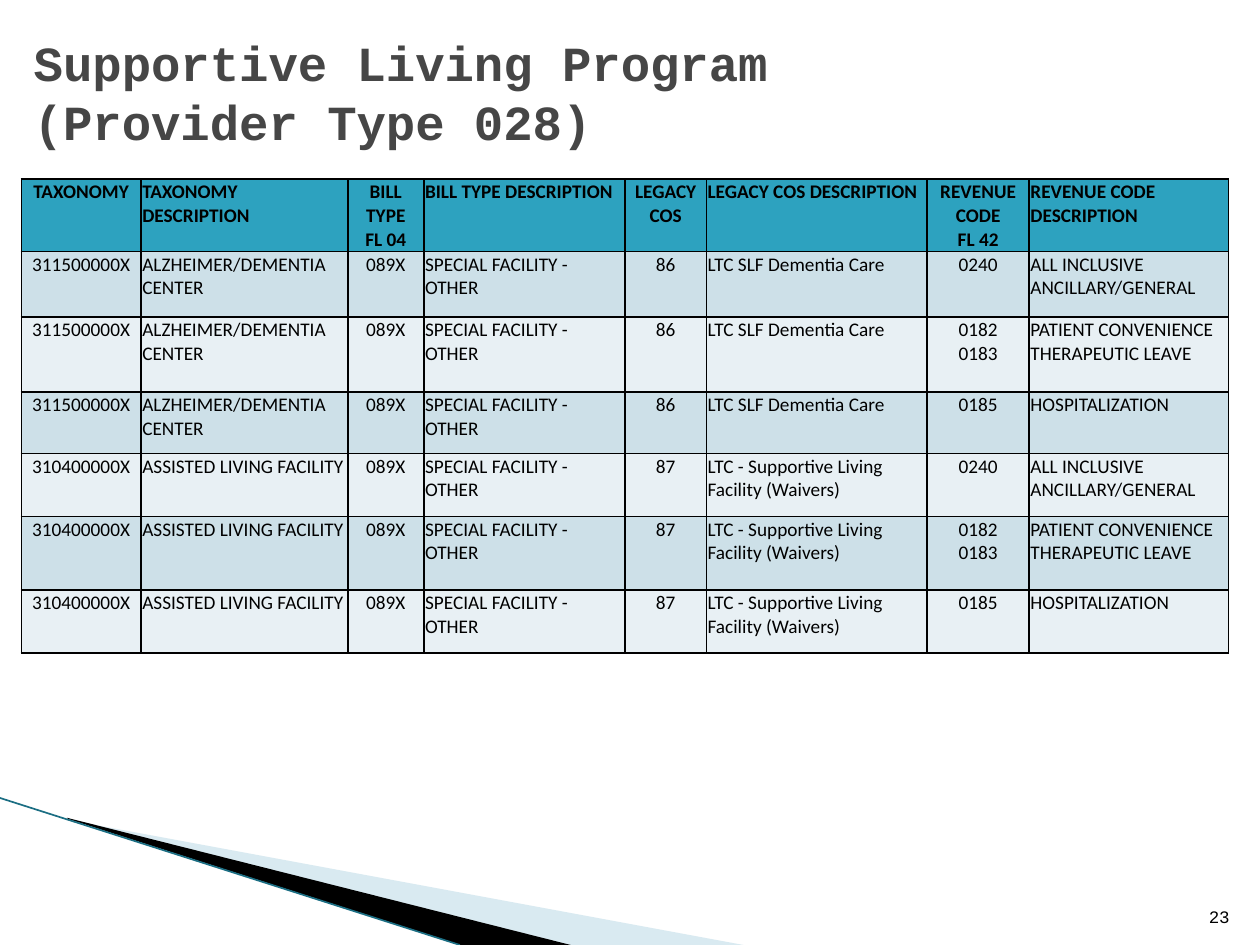
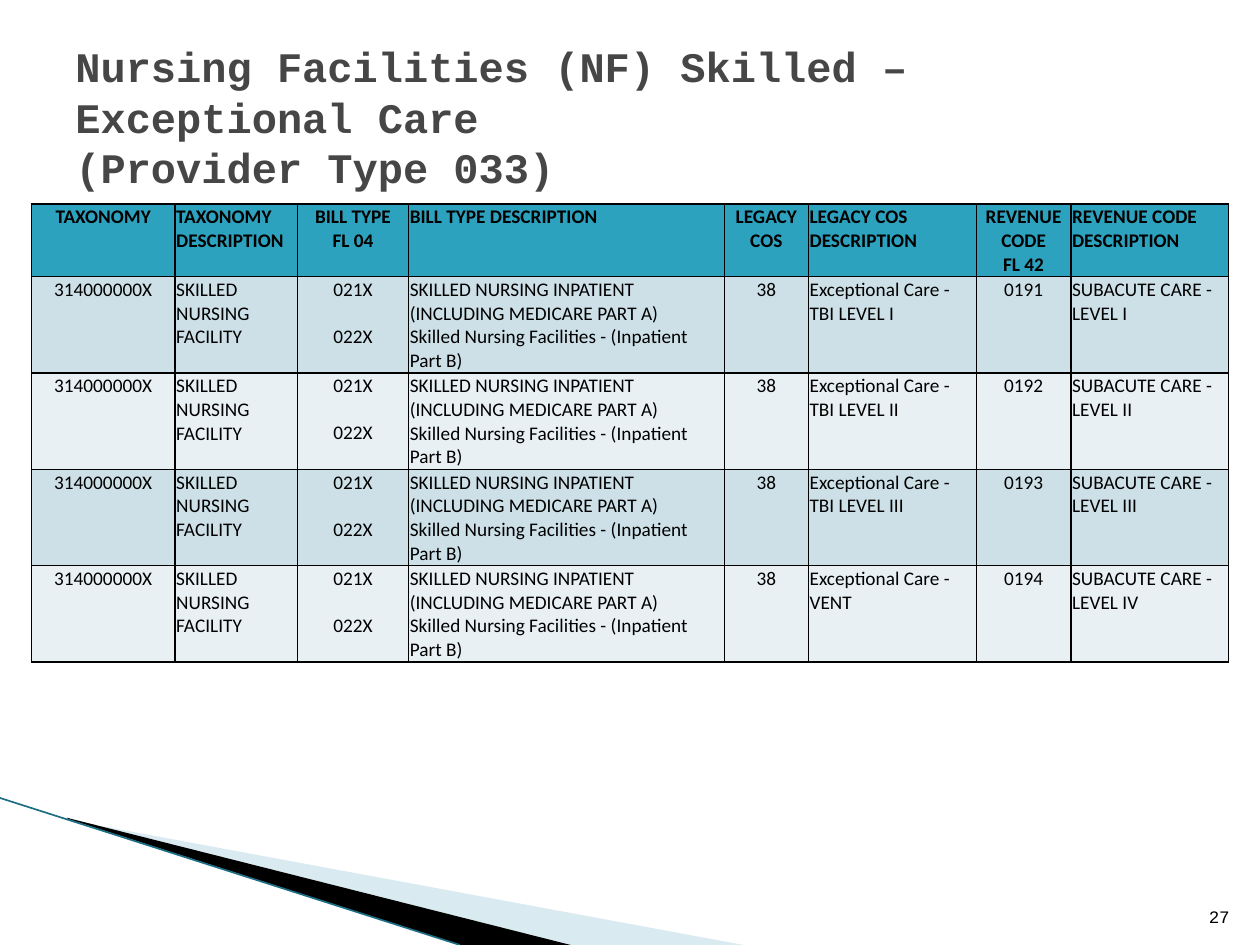
"""Build two billing-code slides, each with a title, a code table and a corner swoosh."""
from dataclasses import dataclass

from lxml import etree
from pptx import Presentation
from pptx.dml.color import RGBColor as RGB
from pptx.enum.shapes import MSO_CONNECTOR as CONN
from pptx.enum.text import MSO_ANCHOR as ANCHOR, PP_ALIGN as ALIGN
from pptx.oxml.ns import qn
from pptx.util import Pt


@dataclass(frozen=True)
class Theme:
    title_font: str = "Courier New"
    table_font: str = "Calibri"
    title: str = "464646"
    ink: str = "000000"
    header: str = "2DA2BF"
    bands: tuple = ("CDE0E8", "E8F0F4")
    swoosh: str = "A0CBDC"
    swoosh_alpha: int = 40
    edge: str = "1B6E83"
    edge_width: float = 0.95
    border: float = 1
    table_size: float = 11
    table_line: float = 13.4
    number_size: float = 10


THEME = Theme()
HEADERS = ["TAXONOMY", "TAXONOMY DESCRIPTION", "BILL TYPE\nFL 04",
           "BILL TYPE DESCRIPTION", "LEGACY COS", "LEGACY COS DESCRIPTION",
           "REVENUE CODE\nFL 42", "REVENUE CODE DESCRIPTION"]
CENTERED_COLUMNS = (0, 2, 4, 6)

LIVING_FACILITIES = [
    ["311500000X", "ALZHEIMER/DEMENTIA CENTER", "089X",
     "SPECIAL FACILITY - OTHER", "86", "LTC SLF Dementia Care"],
    ["310400000X", "ASSISTED LIVING FACILITY", "089X",
     "SPECIAL FACILITY - OTHER", "87",
     "LTC - Supportive Living Facility (Waivers)"],
]
LIVING_REVENUE = [
    ["0240", "ALL INCLUSIVE ANCILLARY/GENERAL"],
    ["0182\n0183", "PATIENT CONVENIENCE\nTHERAPEUTIC LEAVE"],
    ["0185", "HOSPITALIZATION"],
]
SKILLED_FACILITY = [
    "314000000X", "SKILLED NURSING FACILITY", "021X\n\n022X",
    "SKILLED NURSING INPATIENT (INCLUDING MEDICARE PART A)\n"
    "Skilled Nursing Facilities - (Inpatient Part B)", "38"]
CARE_LEVELS = [("TBI LEVEL I", "0191", "I"), ("TBI LEVEL II", "0192", "II"),
               ("TBI LEVEL III", "0193", "III"), ("VENT", "0194", "IV")]


def add_lines(p, text, font, size, color, bold=False):
    for i, line in enumerate(text.split("\n")):
        if i:
            p.add_line_break()
        r = p.add_run()
        r.text = line
        r.font.name = font
        r.font.size = Pt(size)
        r.font.bold = bold
        r.font.color.rgb = RGB.from_string(color)


def add_text(slide, box, text, size, color, anchor, align=ALIGN.LEFT, bold=False):
    sp = slide.shapes.add_textbox(*map(Pt, box))
    tf = sp.text_frame
    tf.word_wrap = True
    tf.vertical_anchor = anchor
    p = tf.paragraphs[0]
    p.alignment = align
    add_lines(p, text, THEME.title_font, size, color, bold)


def add_polygon(slide, points, color, alpha=None):
    start, *rest = [(Pt(x), Pt(y)) for x, y in points]
    builder = slide.shapes.build_freeform(*start)
    builder.add_line_segments(rest, close=True)
    sp = builder.convert_to_shape()
    sp.shadow.inherit = False
    sp.line.fill.background()
    sp.fill.solid()
    sp.fill.fore_color.rgb = RGB.from_string(color)
    if alpha is not None:
        clr = next(sp._element.spPr.iter(qn("a:srgbClr")))
        etree.SubElement(clr, qn("a:alpha"), val=str(alpha * 1000))


def add_swoosh(slide):
    add_polygon(slide, [(39.6, 468.7), (424.8, 540), (325.8, 540), (39.6, 468)],
                THEME.swoosh, THEME.swoosh_alpha)
    add_polygon(slide, [(38.2, 467.3), (326.2, 540), (263.4, 540), (38.9, 468)],
                THEME.ink)
    edge = slide.shapes.add_connector(CONN.STRAIGHT, 0, Pt(456), Pt(262.8), Pt(540))
    edge.line.color.rgb = RGB.from_string(THEME.edge)
    edge.line.width = Pt(THEME.edge_width)
    etree.SubElement(edge._element.spPr, qn("a:effectLst"))


def set_borders(cell):
    tc_pr = cell._tc.get_or_add_tcPr()
    for i, side in enumerate(("lnL", "lnR", "lnT", "lnB")):
        ln = etree.Element(qn(f"a:{side}"), w=str(Pt(THEME.border)))
        fill = etree.SubElement(ln, qn("a:solidFill"))
        etree.SubElement(fill, qn("a:srgbClr"), val=THEME.ink)
        tc_pr.insert(i, ln)


def fill_cell(cell, text, color, align, bold):
    cell.margin_left = cell.margin_right = cell.margin_top = Pt(0.72)
    cell.margin_bottom = 0
    cell.fill.solid()
    cell.fill.fore_color.rgb = RGB.from_string(color)
    set_borders(cell)
    tf = cell.text_frame
    for i, block in enumerate(text.split("\n\n")):
        p = tf.add_paragraph() if i else tf.paragraphs[0]
        p.alignment = align
        if i:
            p.space_before = Pt(THEME.table_line)
        add_lines(p, block, THEME.table_font, THEME.table_size, THEME.ink, bold)


def add_code_table(slide, left, top, widths, heights, rows):
    frame = slide.shapes.add_table(len(heights), len(widths), Pt(left), Pt(top),
                                   Pt(sum(widths)), Pt(sum(heights)))
    table = frame.table
    table.horz_banding = False
    for column, width in zip(table.columns, widths):
        column.width = Pt(width)
    for row, height in zip(table.rows, heights):
        row.height = Pt(height)
    for i, texts in enumerate([HEADERS] + rows):
        color = THEME.bands[(i - 1) % 2] if i else THEME.header
        for j, text in enumerate(texts):
            align = ALIGN.CENTER if j in CENTERED_COLUMNS else ALIGN.LEFT
            fill_cell(table.cell(i, j), text, color, align, bold=i == 0)


def add_code_slide(prs, number, title, title_box, title_size, **table):
    slide = prs.slides.add_slide(prs.slide_layouts[6])
    add_swoosh(slide)
    add_code_table(slide, **table)
    add_text(slide, (681, 504.7, 28.8, 28.8), str(number), THEME.number_size,
             THEME.ink, ANCHOR.BOTTOM, ALIGN.RIGHT)
    add_text(slide, title_box, title, title_size, THEME.title, ANCHOR.MIDDLE,
             bold=True)


def main():
    prs = Presentation()
    prs.slide_width, prs.slide_height = Pt(720), Pt(540)
    add_code_slide(
        prs, 23, "Supportive Living Program\n(Provider Type 028)",
        (12.2, 18, 689.8, 68.4), 28,
        left=12.2, top=102.2,
        widths=[68.4, 118.2, 43.4, 115, 46.5, 126.2, 58.3, 113.8],
        heights=[41, 37.5, 43, 35, 36, 42, 36],
        rows=[facility + revenue for facility in LIVING_FACILITIES
              for revenue in LIVING_REVENUE])
    add_code_slide(
        prs, 27,
        "Nursing Facilities (NF) Skilled – Exceptional Care\n(Provider Type 033)",
        (36, 21.6, 648, 90), 24,
        left=18, top=116.6,
        widths=[82, 70, 63.5, 180.5, 48, 96, 54, 90],
        heights=[41] + [55] * len(CARE_LEVELS),
        rows=[SKILLED_FACILITY + [f"Exceptional Care - {care}", code,
                                  f"SUBACUTE CARE - LEVEL {level}"]
              for care, code, level in CARE_LEVELS])
    prs.save("out.pptx")


if __name__ == "__main__":
    main()
